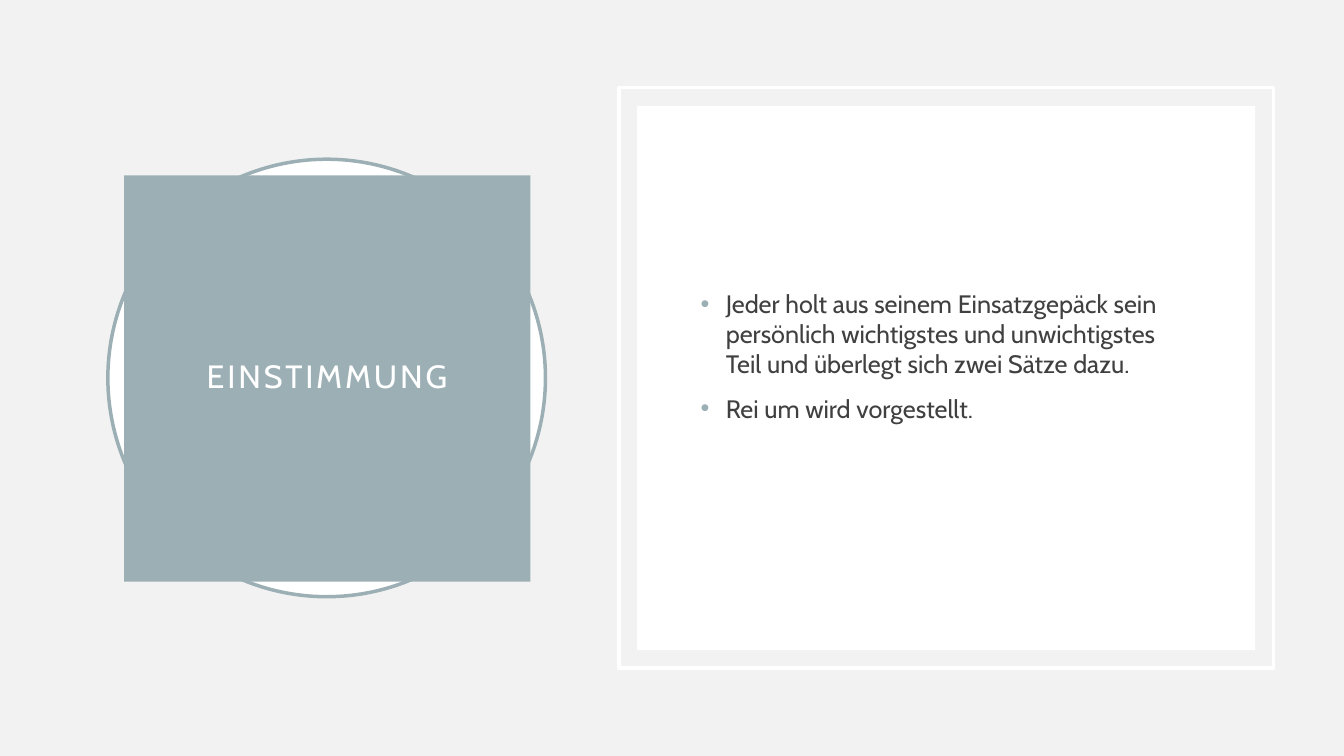
from lxml.etree import SubElement
from pptx import Presentation
from pptx.dml.color import RGBColor
from pptx.enum.shapes import MSO_SHAPE as Preset
from pptx.enum.text import MSO_ANCHOR as Anchor, MSO_AUTO_SIZE as AutoSize, PP_ALIGN as Align
from pptx.oxml.ns import qn
from pptx.util import Inches, Pt

BACKGROUND = RGBColor(0xF2, 0xF2, 0xF2)
ACCENT = RGBColor(0x9B, 0xAF, 0xB5)
WHITE = RGBColor(0xFF, 0xFF, 0xFF)
TEXT = RGBColor(0x40, 0x40, 0x40)
FONT = "Cabin"
POINTS = (
    "Jeder holt aus seinem Einsatzgepäck sein persönlich wichtigstes "
    "und unwichtigstes Teil und überlegt sich zwei Sätze dazu.",
    "Rei um wird vorgestellt.",
)


def add_panel(slide, preset, left, top, width, height, fill=None, line=None):
    """Add a plain shape with an optional fill and outline."""
    panel = slide.shapes.add_shape(
        preset, Inches(left), Inches(top), Inches(width), Inches(height))
    panel.shadow.inherit = False
    if fill is None:
        panel.fill.background()
    else:
        panel.fill.solid()
        panel.fill.fore_color.rgb = fill
    if line is None:
        panel.line.fill.background()
    else:
        panel.line.color.rgb = line
        panel.line.width = Pt(2.5)
    return panel


def add_span(para, text, size, color):
    """Add a formatted run to a paragraph."""
    span = para.add_run()
    span.text = text
    span.font.name = FONT
    span.font.size = Pt(size)
    span.font.color.rgb = color
    return span


def set_title(title, text):
    """Place the title as a filled square with spaced letters."""
    title.left, title.top = Inches(1.23), Inches(1.74)
    title.width = title.height = Inches(4.03)
    title.fill.solid()
    title.fill.fore_color.rgb = ACCENT
    frame = title.text_frame
    frame.auto_size = AutoSize.NONE
    frame.word_wrap = True
    frame.vertical_anchor = Anchor.MIDDLE
    frame.margin_left = frame.margin_right = Inches(0.2)
    frame.margin_top = frame.margin_bottom = Inches(0.2)
    para = frame.paragraphs[0]
    para.alignment = Align.CENTER
    para.line_spacing = 0.9
    span = add_span(para, text, 23, WHITE)
    span.font._element.set("spc", "200")


def set_bullet(para):
    """Give a paragraph a hanging accent bullet."""
    properties = para._p.get_or_add_pPr()
    properties.set("marL", str(Inches(0.25)))
    properties.set("indent", str(-Inches(0.25)))
    color = SubElement(properties, qn("a:buClr"))
    SubElement(color, qn("a:srgbClr")).set("val", str(ACCENT))
    SubElement(properties, qn("a:buFont")).set("typeface", "Arial")
    SubElement(properties, qn("a:buChar")).set("char", "•")


def add_bullets(slide, points):
    """Add the vertically centred bullet list."""
    box = slide.shapes.add_textbox(
        Inches(6.85), Inches(1.58), Inches(5.09), Inches(3.9))
    frame = box.text_frame
    frame.word_wrap = True
    frame.vertical_anchor = Anchor.MIDDLE
    for index, point in enumerate(points):
        para = frame.add_paragraph() if index else frame.paragraphs[0]
        para.space_before = Pt(10)
        set_bullet(para)
        add_span(para, point, 18, TEXT)


def main():
    """Build the slide and save the deck."""
    deck = Presentation()
    deck.slide_width, deck.slide_height = Inches(13.33), Inches(7.5)
    page = deck.slides.add_slide(deck.slide_layouts[5])
    page.background.fill.solid()
    page.background.fill.fore_color.rgb = BACKGROUND

    title = page.shapes.title
    circle = add_panel(page, Preset.OVAL, 1.07, 1.58, 4.34, 4.34, WHITE, ACCENT)
    title.element.addprevious(circle.element)
    set_title(title, "EINSTIMMUNG")

    add_panel(page, Preset.RECTANGLE, 6.14, 0.87, 6.49, 5.76, line=WHITE)
    add_panel(page, Preset.RECTANGLE, 6.32, 1.05, 6.13, 5.4, fill=WHITE)
    add_bullets(page, POINTS)
    deck.save("out.pptx")


if __name__ == "__main__":
    main()
